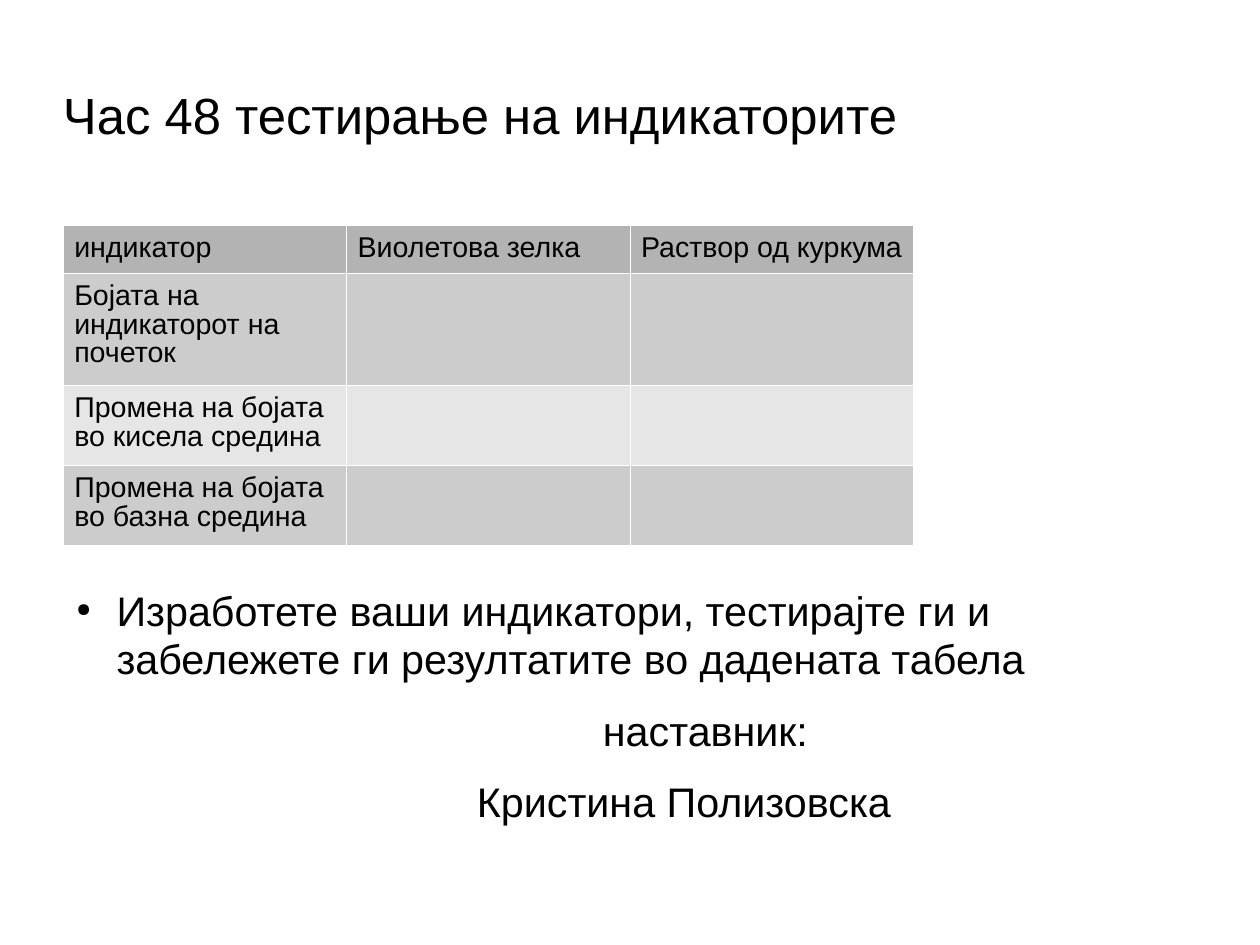
from lxml import etree
from pptx import Presentation
from pptx.dml.color import RGBColor
from pptx.enum.text import MSO_ANCHOR, MSO_AUTO_SIZE, PP_ALIGN
from pptx.oxml.ns import qn
from pptx.util import Cm, Pt

MIDDLE = MSO_ANCHOR.MIDDLE
TOP = MSO_ANCHOR.TOP
LEFT = PP_ALIGN.LEFT
NO_AUTOFIT = MSO_AUTO_SIZE.NONE

FONT = "Arial"
BLACK = RGBColor(0x00, 0x00, 0x00)
WHITE = RGBColor(0xFF, 0xFF, 0xFF)
HEADER_GRAY = RGBColor(0xB3, 0xB3, 0xB3)
DARK_BAND = RGBColor(0xCC, 0xCC, 0xCC)
LIGHT_BAND = RGBColor(0xE6, 0xE6, 0xE6)

TITLE = "Час 48 тестирање на индикаторите"
INDICATOR_ROWS = [
    (1.07, HEADER_GRAY, ("индикатор", "Виолетова зелка", "Раствор од куркума")),
    (2.49, DARK_BAND, ("Бојата на индикаторот на почеток", "", "")),
    (1.78, LIGHT_BAND, ("Промена на бојата во кисела средина", "", "")),
    (1.78, DARK_BAND, ("Промена на бојата во базна средина", "", "")),
]
TASK = "Изработете ваши индикатори, тестирајте ги и забележете ги резултатите во дадената табела"
SIGNATURE = [("наставник:", 12.0), ("Кристина Полизовска", 9.2)]


def write(paragraph, text, size, line_spacing):
    """Add one run of black text to a paragraph and format it."""
    paragraph.alignment = LEFT
    paragraph.line_spacing = line_spacing
    paragraph.space_before = Pt(0)
    paragraph.font.size = Pt(size)
    if text:
        run = paragraph.add_run()
        run.text = text
        run.font.name = FONT
        run.font.size = Pt(size)
        run.font.bold = False
        run.font.color.rgb = BLACK


def prepare_frame(frame, anchor):
    """Give a text frame wrapping, no margins and a fixed size."""
    frame.word_wrap = True
    frame.auto_size = NO_AUTOFIT
    frame.vertical_anchor = anchor
    frame.margin_left = frame.margin_right = 0
    frame.margin_top = frame.margin_bottom = 0


def add_title(slide, left, top, width, height):
    """Place the lesson title in the title placeholder."""
    title = slide.shapes.title
    title.left, title.top, title.width, title.height = left, top, width, height
    prepare_frame(title.text_frame, MIDDLE)
    write(title.text_frame.paragraphs[0], TITLE, 32, 0.94)


def set_borders(cell):
    """Draw hairline white borders on all sides of a cell."""
    properties = cell._tc.get_or_add_tcPr()
    for position, side in enumerate(("lnL", "lnR", "lnT", "lnB")):
        border = etree.Element(qn(f"a:{side}"), w=str(Pt(0.06)))
        fill = etree.SubElement(border, qn("a:solidFill"))
        etree.SubElement(fill, qn("a:srgbClr"), val=str(WHITE))
        properties.insert(position, border)


def add_indicator_table(slide, left, top, width):
    """Place the table in which the indicator colours are recorded."""
    column_count = len(INDICATOR_ROWS[0][2])
    height = Cm(sum(row[0] for row in INDICATOR_ROWS))
    table = slide.shapes.add_table(
        len(INDICATOR_ROWS), column_count, left, top, width, height).table
    for column in table.columns:
        column.width = width // column_count
    for row, (row_height, color, labels) in zip(table.rows, INDICATOR_ROWS):
        row.height = Cm(row_height)
        for cell, label in zip(row.cells, labels):
            cell.fill.solid()
            cell.fill.fore_color.rgb = color
            set_borders(cell)
            cell.margin_left, cell.margin_right = Cm(0.25), Cm(0.2)
            cell.margin_top, cell.margin_bottom = Cm(0.22), Cm(0.13)
            write(cell.text_frame.paragraphs[0], label, 18, 0.89)


def set_indent(paragraph, margin, first_line=0):
    """Set the left margin and first-line indent of a paragraph."""
    properties = paragraph._p.get_or_add_pPr()
    properties.set("marL", str(Cm(margin)))
    properties.set("indent", str(Cm(first_line)))
    return properties


def add_task(slide, left, top, width, height):
    """Place the bulleted task and the teacher's signature below it."""
    frame = slide.shapes.add_textbox(left, top, width, height).text_frame
    prepare_frame(frame, TOP)
    task = frame.paragraphs[0]
    properties = set_indent(task, 1.19, -0.89)
    color = etree.SubElement(properties, qn("a:buClr"))
    etree.SubElement(color, qn("a:srgbClr"), val=str(BLACK))
    etree.SubElement(properties, qn("a:buSzPct"), val="45000")
    etree.SubElement(properties, qn("a:buChar"), char="●")
    write(task, TASK, 26, 0.98)
    task.space_after = Pt(14.2)
    for text, margin in SIGNATURE:
        line = frame.add_paragraph()
        set_indent(line, margin)
        write(line, text, 26, 0.98)
        line.space_after = Pt(14.2)


def main():
    """Build and save the lesson slide."""
    presentation = Presentation()
    presentation.slide_width = Cm(28)
    presentation.slide_height = Cm(21)
    slide = presentation.slides.add_slide(presentation.slide_layouts[5])
    left = Cm(1.4)
    add_title(slide, left, Cm(1.6), Cm(20), Cm(2))
    add_indicator_table(slide, left, Cm(5), Cm(18.9))
    add_task(slide, left, Cm(13.06), Cm(25.2), Cm(5.5))
    presentation.save("out.pptx")


if __name__ == "__main__":
    main()
